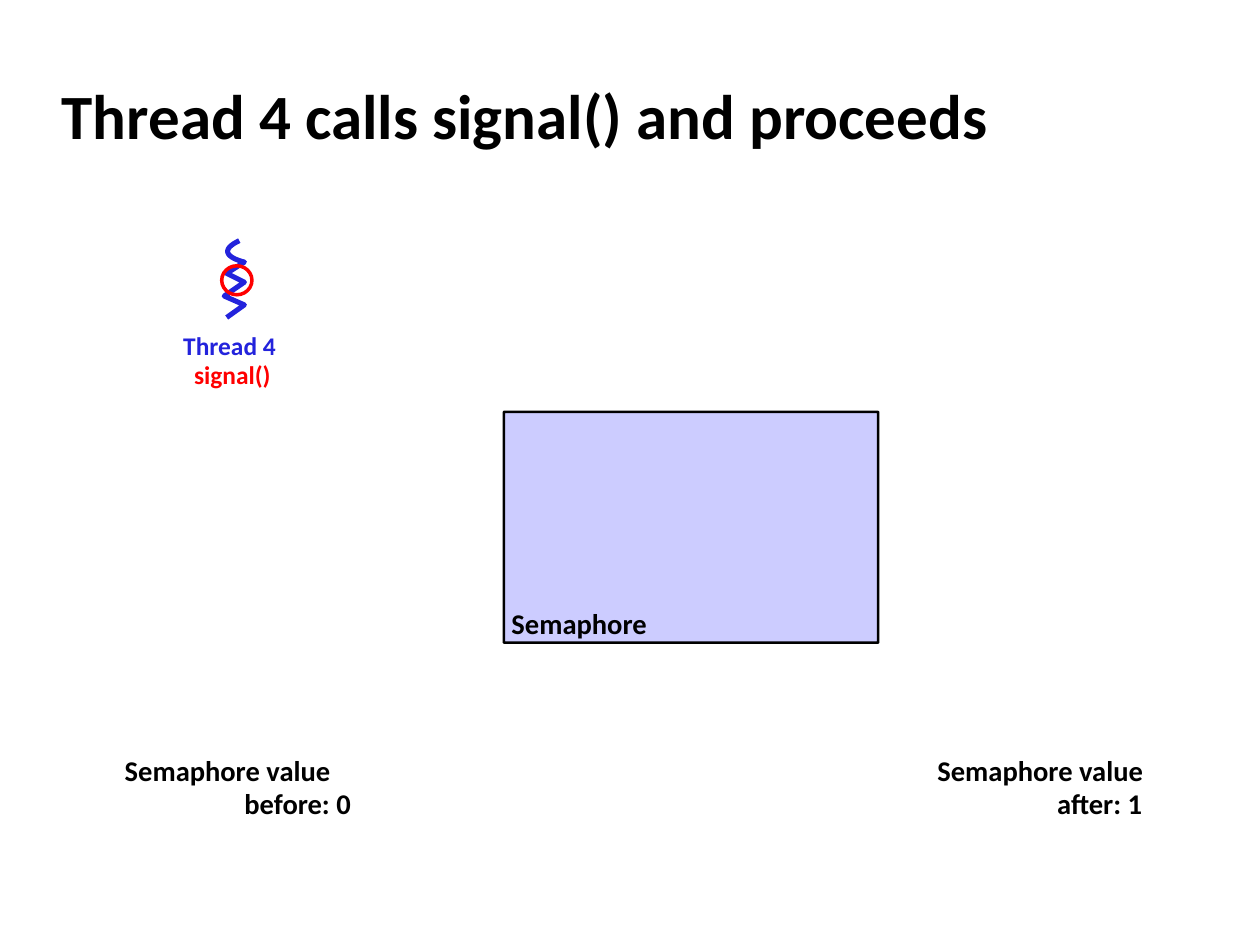
"""Build a slide on a thread that signals a semaphore and proceeds."""
from dataclasses import dataclass

from pptx import Presentation
from pptx import util as u
from pptx.dml.color import RGBColor
from pptx.enum import shapes, text

COLORS = {"ink": "000000", "thread": "2323DC", "signal": "FF0000", "box": "CCCCFF"}


@dataclass
class Line:
    """One paragraph of a label."""
    words: str
    color: str = "ink"
    indent: float = 0.05


@dataclass
class Label:
    """A text box with its lines."""
    left: float
    top: float
    width: float
    height: float
    lines: list[Line]
    size: float = 16.3
    align: text.PP_ALIGN = text.PP_ALIGN.LEFT
    wrap: bool = True


def rgb(name: str) -> RGBColor:
    """Look up a colour."""
    return RGBColor.from_string(COLORS[name])


def set_all(obj, values: dict) -> None:
    """Set each attribute from a dict."""
    for name, value in values.items():
        setattr(obj, name, value)


def format_run(r, size: float, color: str) -> None:
    """Apply the slide's bold type."""
    set_all(r.font, {"name": "Calibri", "size": u.Pt(size), "bold": True})
    r.font.color.rgb = rgb(color)


def outline(sp, color: str, width: float, fill: str | None = None) -> None:
    """Style a shape's line and fill."""
    sp.shadow.inherit = False
    sp.line.color.rgb = rgb(color)
    sp.line.width = u.Pt(width)
    if fill:
        sp.fill.solid()
        sp.fill.fore_color.rgb = rgb(fill)
    else:
        sp.fill.background()


def add_label(s, label: Label) -> None:
    """Draw a label without margins."""
    box = map(u.Inches, (label.left, label.top, label.width, label.height))
    tf = s.shapes.add_textbox(*box).text_frame
    set_all(tf, {"margin_left": 0, "margin_right": 0, "margin_top": 0,
                 "margin_bottom": 0, "word_wrap": label.wrap})
    for i, line in enumerate(label.lines):
        p = tf.add_paragraph() if i else tf.paragraphs[0]
        set_all(p, {"alignment": label.align, "line_spacing": 0.95})
        p._p.get_or_add_pPr().set("marL", str(u.Inches(line.indent)))
        r = p.add_run()
        r.text = line.words
        format_run(r, label.size, line.color)


def bezier(points: list[tuple[float, float]], steps: int = 24) -> list[tuple[float, float]]:
    """Sample a cubic curve."""
    curve = []
    for i in range(steps + 1):
        t = i / steps
        weights = ((1 - t) ** 3, 3 * t * (1 - t) ** 2, 3 * t * t * (1 - t), t ** 3)
        curve.append(tuple(sum(w * pt[axis] for w, pt in zip(weights, points))
                           for axis in (0, 1)))
    return curve


def add_thread(s) -> None:
    """Draw the squiggle of the thread."""
    hook = bezier([(1.9, 1.91), (1.67, 2.02), (1.94, 2.08), (1.94, 2.08)])
    zigzag = [(1.8, 2.17), (1.94, 2.24), (1.78, 2.35), (1.94, 2.42), (1.8, 2.52)]
    start, *rest = [(u.Inches(x), u.Inches(y)) for x, y in hook + zigzag]
    fb = s.shapes.build_freeform(*start)
    fb.add_line_segments(rest, close=False)
    outline(fb.convert_to_shape(), "thread", 2.89)


def add_title(s, words: str) -> None:
    """Place and format the title."""
    sp = s.shapes.title
    set_all(sp, {"left": u.Inches(0.39), "top": u.Inches(0.49),
                 "width": u.Inches(8.3), "height": u.Inches(0.83)})
    tf = sp.text_frame
    set_all(tf, {"vertical_anchor": text.MSO_ANCHOR.MIDDLE,
                 "auto_size": text.MSO_AUTO_SIZE.NONE, "word_wrap": True})
    p = tf.paragraphs[0]
    p.alignment = text.PP_ALIGN.LEFT
    r = p.add_run()
    r.text = words
    format_run(r, 36, "ink")


def main() -> None:
    """Build and save the slide."""
    prs = Presentation()
    set_all(prs, {"slide_width": u.Inches(10), "slide_height": u.Inches(7.5)})
    s = prs.slides.add_slide(prs.slide_layouts[5])
    add_title(s, "Thread 4 calls signal() and proceeds")

    kind = shapes.MSO_SHAPE
    box = s.shapes.add_shape(kind.ROUNDED_RECTANGLE, *map(u.Inches, (4, 3.27, 2.97, 1.83)))
    box.adjustments[0] = 0.001
    outline(box, "ink", 1.45, "box")
    add_thread(s)
    ring = s.shapes.add_shape(kind.OVAL, *map(u.Inches, (1.76, 2.11, 0.24, 0.23)))
    outline(ring, "signal", 2)

    add_label(s, Label(1.36, 2.64, 0.97, 0.47,
                       [Line("Thread 4 ", "thread", 0), Line("signal()", "signal", 0)],
                       14.5, text.PP_ALIGN.CENTER, False))
    add_label(s, Label(4.01, 4.83, 2.97, 0.26, [Line("Semaphore")]))
    for left, value in ((0.94, "before: 0"), (7.39, "after: 1")):
        add_label(s, Label(left, 6, 2.97, 0.26,
                           [Line("Semaphore value"), Line(value, indent=1)]))
    prs.save("out.pptx")


if __name__ == "__main__":
    main()
